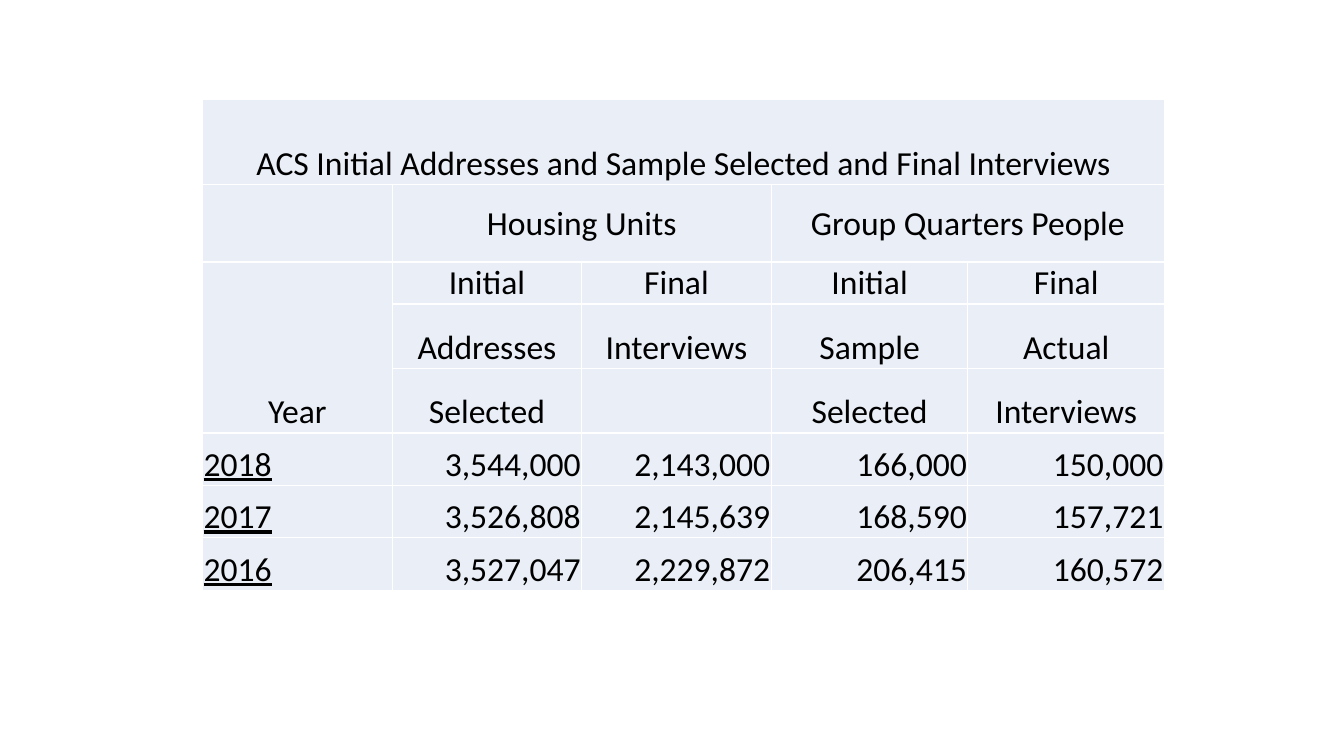
"""Build a slide with a table of ACS sample sizes and final interviews by year."""
from pptx import Presentation
from pptx.dml.color import RGBColor
from pptx.enum import text
from pptx.util import Inches, Pt

PALE_BLUE = RGBColor(0xEA, 0xEF, 0xF7)
BLACK = RGBColor(0, 0, 0)

column_widths = [1.88, 1.88, 1.88, 1.95, 1.95]
row_heights = [0.84, 0.77, 0.32, 0.64, 0.64, 0.52, 0.52, 0.52]
first_year_row = 5
entries = [
    ["ACS Initial Addresses and Sample Selected and Final Interviews", "", "", "", ""],
    ["", "Housing Units", "", "Group Quarters People", ""],
    ["Year", "Initial", "Final", "Initial", "Final"],
    ["", "Addresses", "Interviews", "Sample", "Actual"],
    ["", "Selected", "", "Selected", "Interviews"],
    ["2018", "3,544,000", "2,143,000", "166,000", "150,000"],
    ["2017", "3,526,808", "2,145,639", "168,590", "157,721"],
    ["2016", "3,527,047", "2,229,872", "206,415", "160,572"],
]
merges = [((0, 0), (0, 4)), ((1, 1), (1, 2)), ((1, 3), (1, 4)), ((2, 0), (4, 0))]

deck = Presentation()
deck.slide_width, deck.slide_height = Inches(13.33), Inches(7.5)
slide = deck.slides.add_slide(deck.slide_layouts[6])

interviews = slide.shapes.add_table(
    len(row_heights), len(column_widths), Inches(2.01), Inches(0.99),
    Inches(sum(column_widths)), Inches(sum(row_heights))).table
interviews.first_row = False
interviews.horz_banding = False
for column, width in zip(interviews.columns, column_widths):
    column.width = Inches(width)
for row, height in zip(interviews.rows, row_heights):
    row.height = Inches(height)
for start, end in merges:
    interviews.cell(*start).merge(interviews.cell(*end))

for r, row_entries in enumerate(entries):
    for c, entry in enumerate(row_entries):
        cell = interviews.cell(r, c)
        cell.fill.solid()
        cell.fill.fore_color.rgb = PALE_BLUE
        if not entry:
            continue
        cell.margin_left = cell.margin_right = cell.margin_top = Inches(0.01)
        cell.margin_bottom = 0
        cell.vertical_anchor = text.MSO_ANCHOR.MIDDLE if r == 1 else text.MSO_ANCHOR.BOTTOM
        cell.text_frame.text = entry
        paragraph = cell.text_frame.paragraphs[0]
        font = paragraph.runs[0].font
        font.name, font.size = "Calibri", Pt(24)
        font.color.rgb = BLACK
        if r < first_year_row:
            paragraph.alignment = text.PP_ALIGN.CENTER
        elif c == 0:
            paragraph.alignment = text.PP_ALIGN.LEFT
            font.underline = True
        else:
            paragraph.alignment = text.PP_ALIGN.RIGHT

deck.save("out.pptx")
